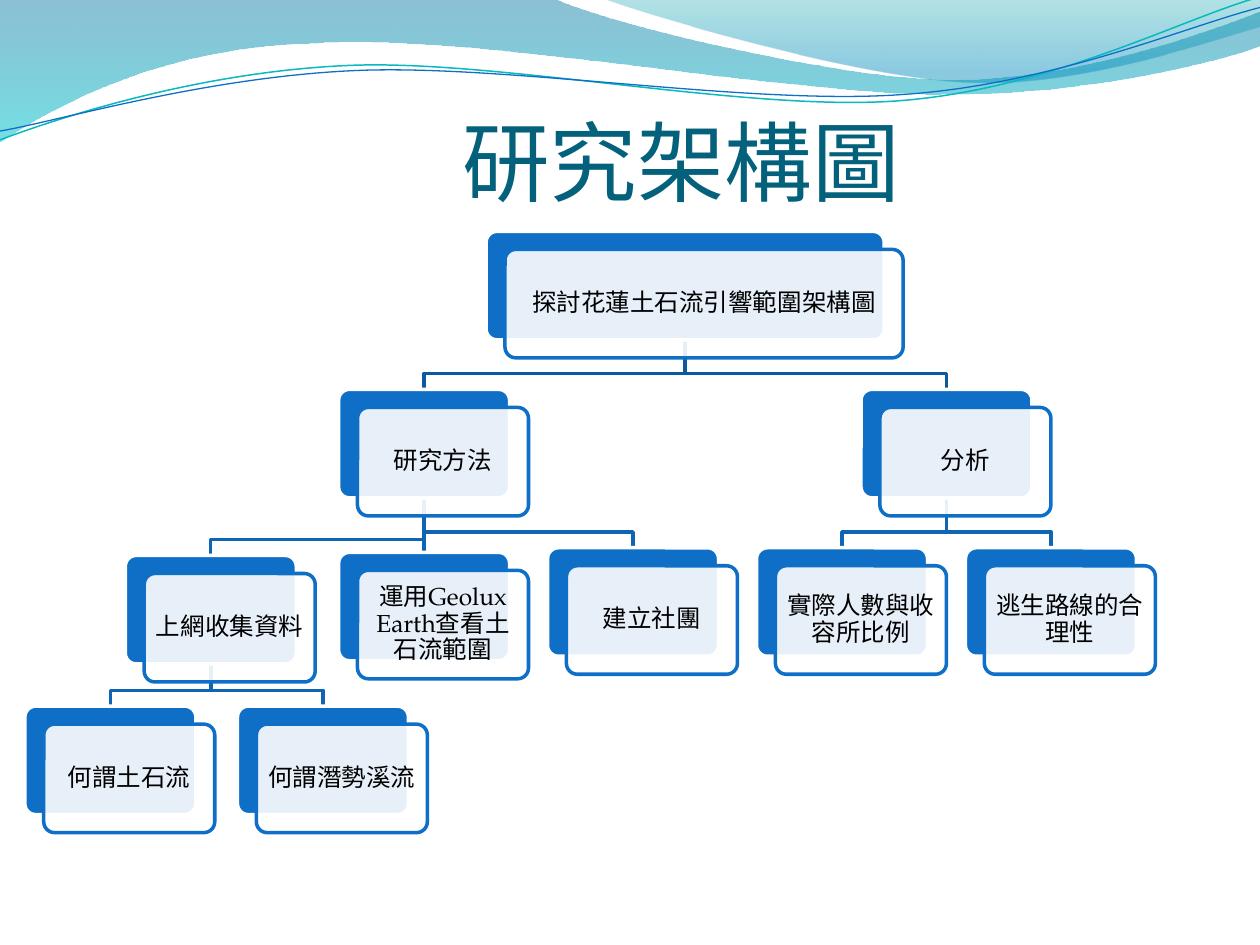
import math

from lxml import etree
from pptx import Presentation
from pptx import util as u
from pptx.dml import color
from pptx.enum import shapes, text
from pptx.oxml import ns

BLUE, WHITE = "0F6FC6", "FFFFFF"
UPPER_LINK, LOWER_LINK = "0C599F", "0E65B4"
SERIF, SANS = "TeX Gyre Pagella", "Noto Sans CJK SC"
CARD_W, CARD_H, ROOT_W = 97.7, 62, 227.5
SHIFT_X, SHIFT_Y = 10.8, 10.3
BEND = 9
TILT = 2.7

CARDS = {
    "root": ("探討花蓮土石流引響範圍架構圖", 277.8, 132.2, None),
    "method": ("研究方法", 193.5, 222.5, "root"),
    "online": ("上網收集資料", 71.6, 317.4, "method"),
    "debris": ("何謂土石流", 14.2, 403.5, "online"),
    "stream": ("何謂潛勢溪流", 135.7, 403.5, "online"),
    "globe": ("運用Geolux Earth查看土石流範圍", 193.5, 315.6, "method"),
    "club": ("建立社團", 312.9, 313, "method"),
    "analysis": ("分析", 492, 222.5, "root"),
    "ratio": ("實際人數與收容所比例", 432.3, 313, "analysis"),
    "escape": ("逃生路線的合理性", 551.7, 313, "analysis"),
}


def rgb(value):
    return color.RGBColor.from_string(value)


def set_alpha(clr, percent):
    etree.SubElement(clr, ns.qn("a:alpha")).set("val", str(percent * 1000))


def add_path(s, start, segments, close=False):
    points = [(u.Pt(x), u.Pt(y)) for seg in segments for x, y in seg]
    builder = s.shapes.build_freeform(u.Pt(start[0]), u.Pt(start[1]), scale=1.0)
    builder.add_line_segments(points, close=close)
    sp = builder.convert_to_shape()
    sp.shadow.inherit = False
    steps = iter(list(sp._element.iter(ns.qn("a:lnTo"))))
    for seg in segments:
        group = [next(steps) for _ in seg]
        if len(seg) == 3:
            curve = etree.Element(ns.qn("a:cubicBezTo"))
            group[0].addprevious(curve)
            for step in group:
                curve.append(step[0])
                step.getparent().remove(step)
    return sp


def style_line(sp, hex_color, width):
    sp.line.color.rgb = rgb(hex_color)
    sp.line.width = u.Pt(width)


def add_line(s, start, segments, hex_color, width):
    sp = add_path(s, start, segments)
    sp.fill.background()
    style_line(sp, hex_color, width)
    return sp


def add_tilted_line(s, center, start, segments, hex_color, width):
    cx, cy = center
    cos, sin = math.cos(math.radians(TILT)), math.sin(math.radians(TILT))

    def level(point):
        dx, dy = point[0] - cx, point[1] - cy
        return cx + dx * cos - dy * sin, cy + dx * sin + dy * cos

    segments = [[level(point) for point in seg] for seg in segments]
    sp = add_line(s, level(start), segments, hex_color, width)
    sp.rotation = -TILT


def add_wave(s, start, segments, stops):
    sp = add_path(s, start, segments, close=True)
    sp.line.fill.background()
    sp.fill.gradient()
    sp.fill.gradient_angle = 270
    for stop, (position, hex_color, alpha) in zip(sp.fill.gradient_stops, stops):
        stop.position = position
        stop.color.rgb = rgb(hex_color)
    for clr, (_, _, alpha) in zip(sp._element.spPr.iter(ns.qn("a:srgbClr")), stops):
        set_alpha(clr, alpha)


def add_waves(s):
    add_wave(s, (0, 0), [
        [(316.8, -0.7)],
        [(342.7, 12.2), (478, 45.4), (545.8, 45.4)],
        [(614.2, 45.4), (689.8, 18.7), (720, 6.5)],
        [(720.7, 25.9)],
        [(707.8, 31.7), (626.4, 54.7), (537.1, 54)],
        [(447.8, 54), (275, 20.2), (185, 24.5)],
        [(92.9, 25.9), (33.1, 59.8), (-0.7, 81.4)],
    ], [(0, "0074A1", 45), (1, "00C6CF", 55)])
    add_wave(s, (344.9, -0.7), [
        [(366.5, 7.9), (491, 44.6), (553.7, 46.8)],
        [(616.3, 49.7), (691.9, 23), (720, 15.1)],
        [(720, 0)],
    ], [(0, "00A1A9", 30), (0.8, "008BBF", 45)])
    add_tilted_line(s, (359.3, 41.4), (0, 79.9), [
        [(34.6, 67), (113.8, 41), (199.4, 37.4)],
        [(284.4, 33.8), (427, 64.1), (513.4, 57.6)],
        [(599.8, 51.1), (675.4, 10.8), (718.6, -1.4)],
    ], "0AB8BF", 0.85)
    add_tilted_line(s, (359.8, 42.5), (0, 74.9), [
        [(33.8, 69.1), (118.1, 43.9), (203.8, 40.3)],
        [(290.2, 36.7), (429.8, 60.5), (516.2, 54)],
        [(601.9, 48.2), (677.5, 15.1), (720, 4.3)],
    ], BLUE, 0.75)


def set_font(p, name, size, hex_color):
    p.alignment = text.PP_ALIGN.CENTER
    p.font.name = name
    p.font.size = u.Pt(size)
    p.font.color.rgb = rgb(hex_color)


def set_margins(tf, left, top, right, bottom):
    tf.margin_left, tf.margin_top = u.Pt(left), u.Pt(top)
    tf.margin_right, tf.margin_bottom = u.Pt(right), u.Pt(bottom)


def add_title(s, caption):
    sp = s.shapes.title
    sp.left, sp.top, sp.width, sp.height = (u.Pt(v) for v in (82.2, 49, 614, 72.7))
    tf = sp.text_frame
    tf.text = caption
    tf.vertical_anchor = text.MSO_ANCHOR.BOTTOM
    set_margins(tf, 0, 3.6, 0, 0)
    set_font(tf.paragraphs[0], SANS, 50, "04617B")


def add_box(s, x, y, w, fill, line):
    sp = s.shapes.add_shape(shapes.MSO_SHAPE.ROUNDED_RECTANGLE,
                            u.Pt(x), u.Pt(y), u.Pt(w), u.Pt(CARD_H))
    sp.adjustments[0] = 0.1
    sp.shadow.inherit = False
    sp.fill.solid()
    sp.fill.fore_color.rgb = rgb(fill)
    style_line(sp, line, 2)
    return sp


def add_card(s, caption, x, y, w):
    back = add_box(s, x, y, w, BLUE, WHITE)
    front = add_box(s, x + SHIFT_X, y + SHIFT_Y, w, WHITE, BLUE)
    set_alpha(front._element.spPr.find(".//" + ns.qn("a:srgbClr")), 90)
    tf = front.text_frame
    tf.word_wrap = True
    tf.vertical_anchor = text.MSO_ANCHOR.MIDDLE
    set_margins(tf, 4, 4, 4, 4)
    tf.text = caption
    p = tf.paragraphs[0]
    p.line_spacing = 0.9
    set_font(p, SERIF, 14, "000000")
    return back


def add_link(s, parent, child, hex_color):
    x1, y1 = parent.left + parent.width // 2, parent.top + parent.height
    x2, y2 = child.left + child.width // 2, child.top
    if x1 == x2:
        link = s.shapes.add_connector(shapes.MSO_CONNECTOR.STRAIGHT, x1, y1, x2, y2)
        link.begin_connect(parent, 2)
        link.end_connect(child, 0)
        etree.SubElement(link._element.spPr, ns.qn("a:effectLst"))
        style_line(link, hex_color, 2)
        return link
    x1, y1, x2, y2 = (u.Length(v).pt for v in (x1, y1, x2, y2))
    bend = y2 - BEND
    corners = [[(x1, bend)], [(x2, bend)], [(x2, y2)]]
    return add_line(s, (x1, y1), corners, hex_color, 2)


def add_tree(s):
    backs = {}
    for key, (caption, x, y, parent) in CARDS.items():
        backs[key] = add_card(s, caption, x, y, CARD_W if parent else ROOT_W)
    for key, (_, _, _, parent) in CARDS.items():
        if parent:
            hex_color = UPPER_LINK if parent == "root" else LOWER_LINK
            link = add_link(s, backs[parent], backs[key], hex_color)
            backs["root"]._element.addprevious(link._element)


def main():
    prs = Presentation()
    prs.slide_width, prs.slide_height = u.Pt(720), u.Pt(540)
    s = prs.slides.add_slide(prs.slide_layouts[5])
    add_waves(s)
    add_title(s, "研究架構圖")
    add_tree(s)
    prs.save("out.pptx")


if __name__ == "__main__":
    main()
